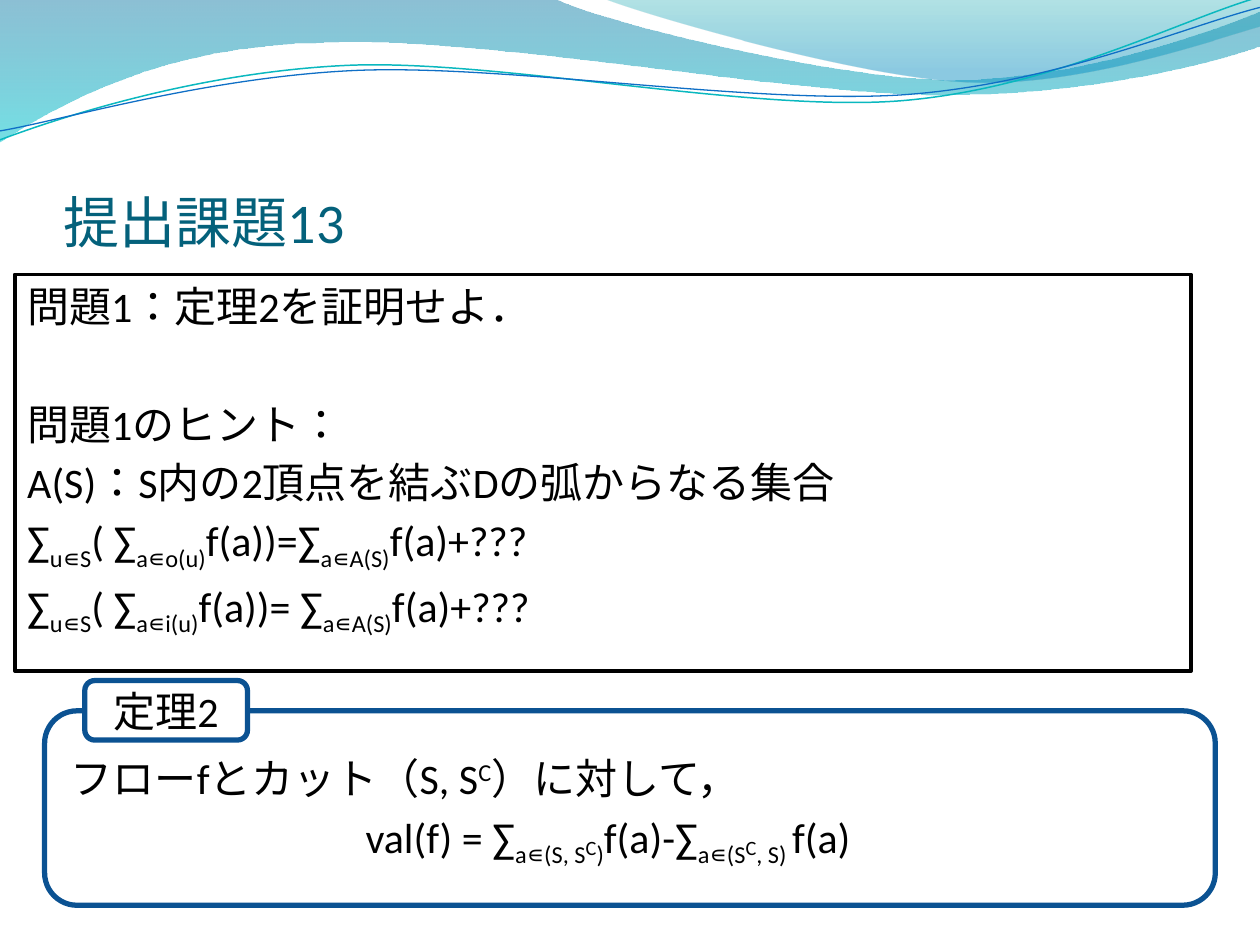
from lxml.etree import SubElement
from pptx import Presentation
from pptx.dml.color import RGBColor
from pptx.enum.lang import MSO_LANGUAGE_ID
from pptx.enum.shapes import MSO_SHAPE
from pptx.enum.text import MSO_ANCHOR, PP_ALIGN
from pptx.oxml.ns import qn
from pptx.util import Cm, Pt

COLORS = {
    "text": "000000", "title": "04617B", "panel": "FFFFFF", "frame": "0B5292",
    "teal_line": "0AB8BF", "blue_line": "0F6FC6",
    "deep_blue": "0074A1", "aqua": "00C6CF", "teal": "00A1A9", "sky": "008BBF",
}
FONT = "Calibri"
SUB, SUPER = -25, 30

LONG_WAVE = [
    [(0, -0.03)],
    [(11.18, -0.03)],
    [(12.09, 0.43), (16.87, 1.6), (19.25, 1.6)],
    [(21.67, 1.6), (24.33, 0.66), (25.4, 0.23)],
    [(25.43, 0.91)],
    [(24.97, 1.12), (22.1, 1.93), (18.95, 1.91)],
    [(15.8, 1.91), (9.7, 0.71), (6.53, 0.86)],
    [(3.28, 0.89), (1.17, 2.11), (-0.03, 2.87)],
]
SHORT_WAVE = [
    [(12.17, -0.03)],
    [(12.93, 0.28), (17.32, 1.57), (19.53, 1.65)],
    [(21.74, 1.75), (24.41, 0.81), (25.4, 0.53)],
    [(25.4, 0)],
]
TEAL_CURVE = [
    [(-0.05, 2.22)],
    [(1.19, 1.82), (4.02, 1.04), (7.05, 1.05)],
    [(10.05, 1.07), (15.02, 2.37), (18.08, 2.29)],
    [(21.13, 2.2), (23.87, 0.91), (25.41, 0.55)],
]
BLUE_CURVE = [
    [(-0.04, 2.04)],
    [(1.16, 1.9), (4.18, 1.15), (7.2, 1.16)],
    [(10.25, 1.18), (15.13, 2.23), (18.19, 2.17)],
    [(21.21, 2.1), (23.93, 1.06), (25.45, 0.75)],
]


def color(name):
    return RGBColor.from_string(COLORS[name])


def add_outline(page, left, top, segments, closed):
    points = [(left + Cm(x), top + Cm(y)) for segment in segments for x, y in segment]
    builder = page.shapes.build_freeform(*points[0])
    builder.add_line_segments(points[1:], close=closed)
    shape = builder.convert_to_shape()
    shape.shadow.inherit = False
    steps = iter(list(shape.element.iter(qn("a:lnTo"))))
    for segment in segments[1:]:
        lines = [next(steps) for _ in segment]
        if len(lines) == 3:
            curve = SubElement(lines[0].getparent(), qn("a:cubicBezTo"))
            lines[0].addprevious(curve)
            for line in lines:
                curve.append(line[0])
                line.getparent().remove(line)
    return shape


def add_wave(page, left, top, segments, stops):
    wave = add_outline(page, left, top, segments, True)
    wave.line.fill.background()
    wave.fill.gradient()
    wave.fill.gradient_angle = 270
    for stop, (position, name, _) in zip(wave.fill.gradient_stops, stops):
        stop.position = position
        stop.color.rgb = color(name)
    for element, (_, _, opacity) in zip(wave.element.spPr.iter(qn("a:srgbClr")), stops):
        SubElement(element, qn("a:alpha")).set("val", str(opacity * 1000))


def add_curve(page, left, top, segments, name, width):
    curve = add_outline(page, left, top, segments, False)
    curve.rotation = 357.3
    curve.fill.background()
    curve.line.color.rgb = color(name)
    curve.line.width = Pt(width)


def add_header(page, left, top):
    add_wave(page, left, top, LONG_WAVE, [(0, "deep_blue", 45), (1, "aqua", 55)])
    add_wave(page, left, top, SHORT_WAVE, [(0, "teal", 30), (0.8, "sky", 45)])
    add_curve(page, left, top, TEAL_CURVE, "teal_line", 0.85)
    add_curve(page, left, top, BLUE_CURVE, "blue_line", 0.75)


def add_panel(page, kind, left, top, width, height, line, line_width, fill=None):
    panel = page.shapes.add_shape(kind, left, top, width, height)
    panel.shadow.inherit = False
    if fill:
        panel.fill.solid()
        panel.fill.fore_color.rgb = color(fill)
    else:
        panel.fill.background()
    panel.line.color.rgb = color(line)
    panel.line.width = Pt(line_width)
    return panel


def add_text_box(page, left, top, width, height):
    box = page.shapes.add_textbox(left, top, width, height)
    box.text_frame.word_wrap = True
    return box


def write_lines(frame, lines, name="text", size=24):
    for index, (runs, before, align) in enumerate(lines):
        para = frame.paragraphs[0] if index == 0 else frame.add_paragraph()
        para.alignment = align
        para.space_before = Pt(before)
        for text, baseline, *own_size in runs:
            span = para.add_run()
            span.text = text
            span.font.name = FONT
            span.font.language_id = MSO_LANGUAGE_ID.JAPANESE
            span.font.size = Pt(own_size[0] if own_size else size)
            span.font.color.rgb = color(name)
            if baseline:
                span.font._element.set("baseline", str(baseline * 1000))


def add_title(page, left, top, width, height):
    frame = add_text_box(page, left, top, width, height).text_frame
    frame.margin_left = frame.margin_right = frame.margin_bottom = 0
    frame.vertical_anchor = MSO_ANCHOR.BOTTOM
    write_lines(frame, [([("提出課題13", 0)], 0, PP_ALIGN.LEFT)], "title", 32)


def hint_formula(arcs, equals):
    return [("∑", 0), ("u∊S", SUB), ("( ∑", 0), (arcs, SUB),
            (f"f(a)){equals}∑", 0), ("a∊A(S)", SUB), ("f(a)+???", 0)]


def add_problem(page, left, top, width, height):
    panel = add_panel(page, MSO_SHAPE.RECTANGLE, left, top, width, height, "text", 2, "panel")
    panel.text_frame.vertical_anchor = MSO_ANCHOR.TOP
    write_lines(panel.text_frame, [
        ([("問題1：定理2を証明せよ．", 0)], 5, PP_ALIGN.LEFT),
        ([("問題1のヒント：", 0)], 38.5, PP_ALIGN.LEFT),
        ([("A(S)：S内の2頂点を結ぶDの弧からなる集合", 0)], 4.5, PP_ALIGN.LEFT),
        (hint_formula("a∊o(u)", "="), 4.5, PP_ALIGN.LEFT),
        (hint_formula("a∊i(u)", "= "), 4.5, PP_ALIGN.LEFT),
    ])


def add_theorem(page, left, top, width, height):
    rounded = MSO_SHAPE.ROUNDED_RECTANGLE
    add_panel(page, rounded, left, top, width, height, "frame", 3)
    label = add_panel(page, rounded, left + Cm(0.81), top - Cm(0.61),
                      Cm(3.28), Cm(1.2), "frame", 3, "panel")
    label.text_frame.vertical_anchor = MSO_ANCHOR.MIDDLE
    write_lines(label.text_frame, [([("定理2", 0)], 0, PP_ALIGN.CENTER)])

    body = add_text_box(page, left + Cm(0.28), top + Cm(0.71), width + Cm(1.72), Cm(1.55))
    small_c = ("C", -5, 20)
    write_lines(body.text_frame, [
        ([("フローfとカット（S, S", 0), ("C", SUPER), ("）に対して，", 0)], 5, PP_ALIGN.LEFT),
        ([("val(f) = ∑", 0), ("a∊(S, S", SUB), small_c, (")", SUB), ("f(a)-∑", 0),
          ("a∊(S", SUB), small_c, (", S) ", SUB), ("f(a)", 0)], 5, PP_ALIGN.LEFT),
    ])
    formula = body.text_frame.paragraphs[1]
    formula._p.get_or_add_pPr().set("marL", str(Cm(5.94)))


def main():
    deck = Presentation()
    deck.slide_width, deck.slide_height = Cm(25.4), Cm(19.05)
    page = deck.slides.add_slide(deck.slide_layouts[6])
    add_header(page, Cm(0), Cm(0))
    add_problem(page, Cm(0.3), Cm(5.53), Cm(23.71), Cm(8))
    add_title(page, Cm(1.28), Cm(1.96), Cm(22.86), Cm(3.18))
    add_theorem(page, Cm(0.9), Cm(14.33), Cm(23.6), Cm(3.92))
    deck.save("out.pptx")


if __name__ == "__main__":
    main()
